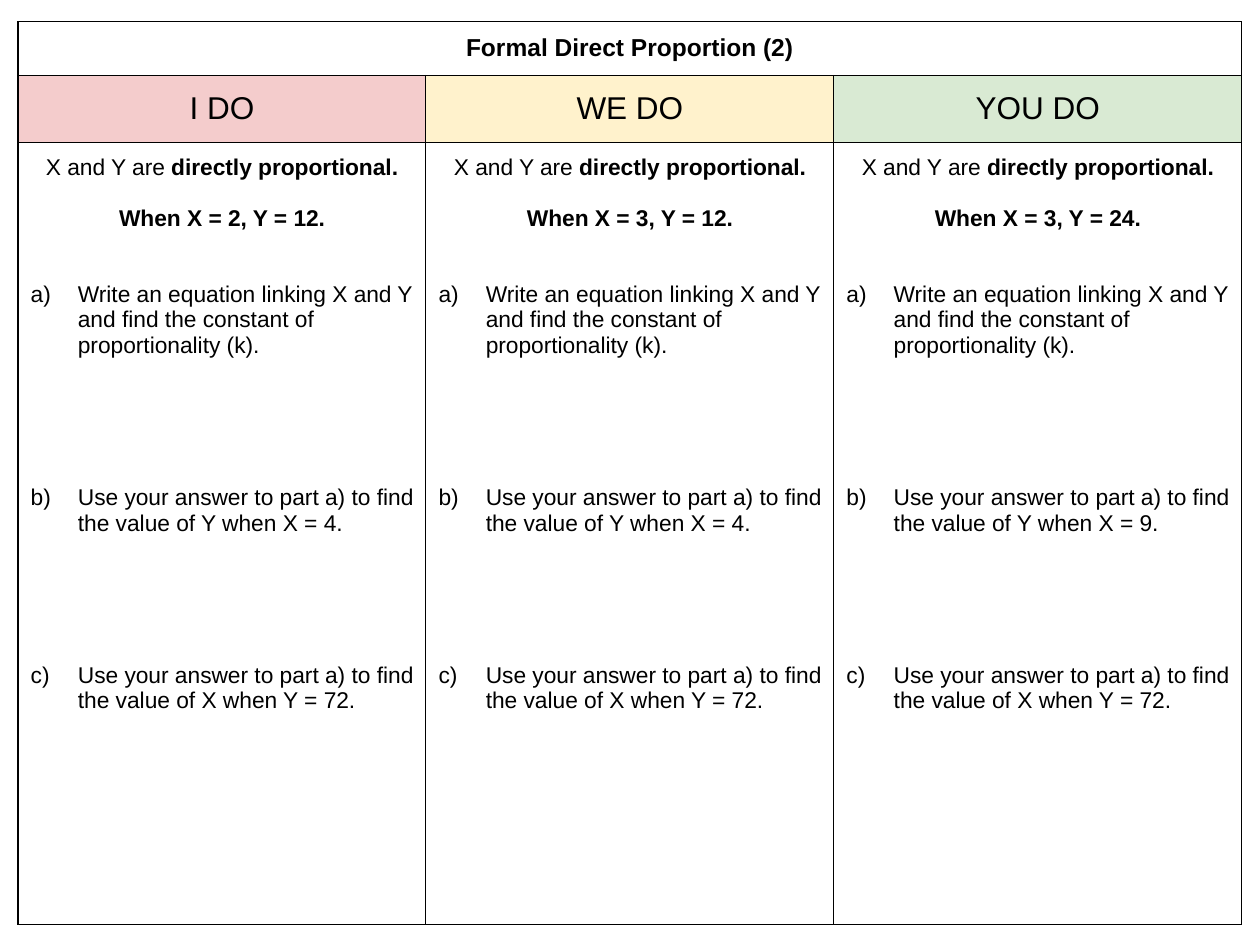
from dataclasses import dataclass

from lxml import etree
from pptx import Presentation, util as u
from pptx.dml.color import RGBColor
from pptx.enum import text
from pptx.oxml import ns

COLOURS = {"ink": "000000", "red": "F4CCCC", "yellow": "FFF2CC", "green": "D9EAD3"}
FONT = "Arial"
BODY_SIZE = 13
LINE = 14.5  # height of one line of body text
HANGING = 27
COLUMN_WIDTH = 233.1
ROW_HEIGHTS = (30.7, 38.3, 446.9)
LEFT, TOP = 10.3, 12.4


@dataclass
class Stage:
    heading: str
    colour: str
    given: str
    find_y: str
    find_x: str


STAGES = (
    Stage("I DO", "red", "When X = 2, Y = 12.", "X = 4", "Y = 72"),
    Stage("WE DO", "yellow", "When X = 3, Y = 12.", "X = 4", "Y = 72"),
    Stage("YOU DO", "green", "When X = 3, Y = 24.", "X = 9", "Y = 72"),
)


def add_run(paragraph, words: str, size: float = BODY_SIZE, bold: bool = False) -> None:
    run = paragraph.add_run()
    run.text = words
    run.font.name = FONT
    run.font.size = u.Pt(size)
    run.font.bold = bold
    run.font.color.rgb = RGBColor.from_string(COLOURS["ink"])


def add_colour(parent, tag: str) -> None:
    holder = etree.SubElement(parent, ns.qn(tag))
    etree.SubElement(holder, ns.qn("a:srgbClr"), val=COLOURS["ink"])


def number_paragraph(paragraph) -> None:
    """Give the paragraph a hanging a), b), c) label."""
    properties = paragraph._p.get_or_add_pPr()
    properties.set("marL", str(u.Pt(HANGING)))
    properties.set("indent", str(-u.Pt(HANGING)))
    add_colour(properties, "a:buClr")
    etree.SubElement(properties, ns.qn("a:buAutoNum"), type="alphaLcParenR")


def style_cell(cell, colour: str | None = None) -> None:
    cell.margin_left = cell.margin_right = u.Pt(7.2)
    cell.margin_top = cell.margin_bottom = u.Pt(7.2)
    if colour:
        cell.fill.solid()
        cell.fill.fore_color.rgb = RGBColor.from_string(COLOURS[colour])
    else:
        cell.fill.background()
    # Borders come before the fill in the cell properties
    properties = cell._tc.get_or_add_tcPr()
    for index, side in enumerate("LRTB"):
        border = etree.Element(ns.qn(f"a:ln{side}"), w=str(u.Pt(0.75)))
        add_colour(border, "a:solidFill")
        properties.insert(index, border)


def write_heading(cell, words: str, size: float, bold: bool) -> None:
    paragraph = cell.text_frame.paragraphs[0]
    paragraph.alignment = text.PP_ALIGN.CENTER
    add_run(paragraph, words, size, bold)


def write_problem(cell, stage: Stage) -> None:
    frame = cell.text_frame
    # Given facts
    opening = frame.paragraphs[0]
    add_run(opening, "X and Y are ")
    add_run(opening, "directly proportional.", bold=True)
    given = frame.add_paragraph()
    given.space_before = u.Pt(LINE)
    add_run(given, stage.given, bold=True)
    opening.alignment = given.alignment = text.PP_ALIGN.CENTER
    # Questions, with working space above the later ones
    questions = (
        (2, "Write an equation linking X and Y and find the constant of proportionality (k)."),
        (5, f"Use your answer to part a) to find the value of Y when {stage.find_y}."),
        (5, f"Use your answer to part a) to find the value of X when {stage.find_x}."),
    )
    for gap_lines, words in questions:
        question = frame.add_paragraph()
        question.alignment = text.PP_ALIGN.LEFT
        question.space_before = u.Pt(gap_lines * LINE)
        number_paragraph(question)
        add_run(question, words)


def main() -> None:
    presentation = Presentation()
    presentation.slide_width, presentation.slide_height = u.Pt(720), u.Pt(540)
    slide = presentation.slides.add_slide(presentation.slide_layouts[6])

    # Table grid
    table = slide.shapes.add_table(
        len(ROW_HEIGHTS), len(STAGES), u.Pt(LEFT), u.Pt(TOP),
        u.Pt(COLUMN_WIDTH * len(STAGES)), u.Pt(sum(ROW_HEIGHTS)),
    ).table
    table.first_row = table.horz_banding = False
    for column in table.columns:
        column.width = u.Pt(COLUMN_WIDTH)
    for row, height in zip(table.rows, ROW_HEIGHTS):
        row.height = u.Pt(height)

    # Title row
    title = table.cell(0, 0)
    title.merge(table.cell(0, len(STAGES) - 1))
    write_heading(title, "Formal Direct Proportion (2)", 14, True)

    # One column for each stage
    for index, stage in enumerate(STAGES):
        top, heading, problem = (table.cell(row, index) for row in range(3))
        style_cell(top)
        style_cell(heading, stage.colour)
        heading.vertical_anchor = text.MSO_ANCHOR.MIDDLE
        write_heading(heading, stage.heading, 18, False)
        style_cell(problem)
        write_problem(problem, stage)

    presentation.save("out.pptx")


if __name__ == "__main__":
    main()
